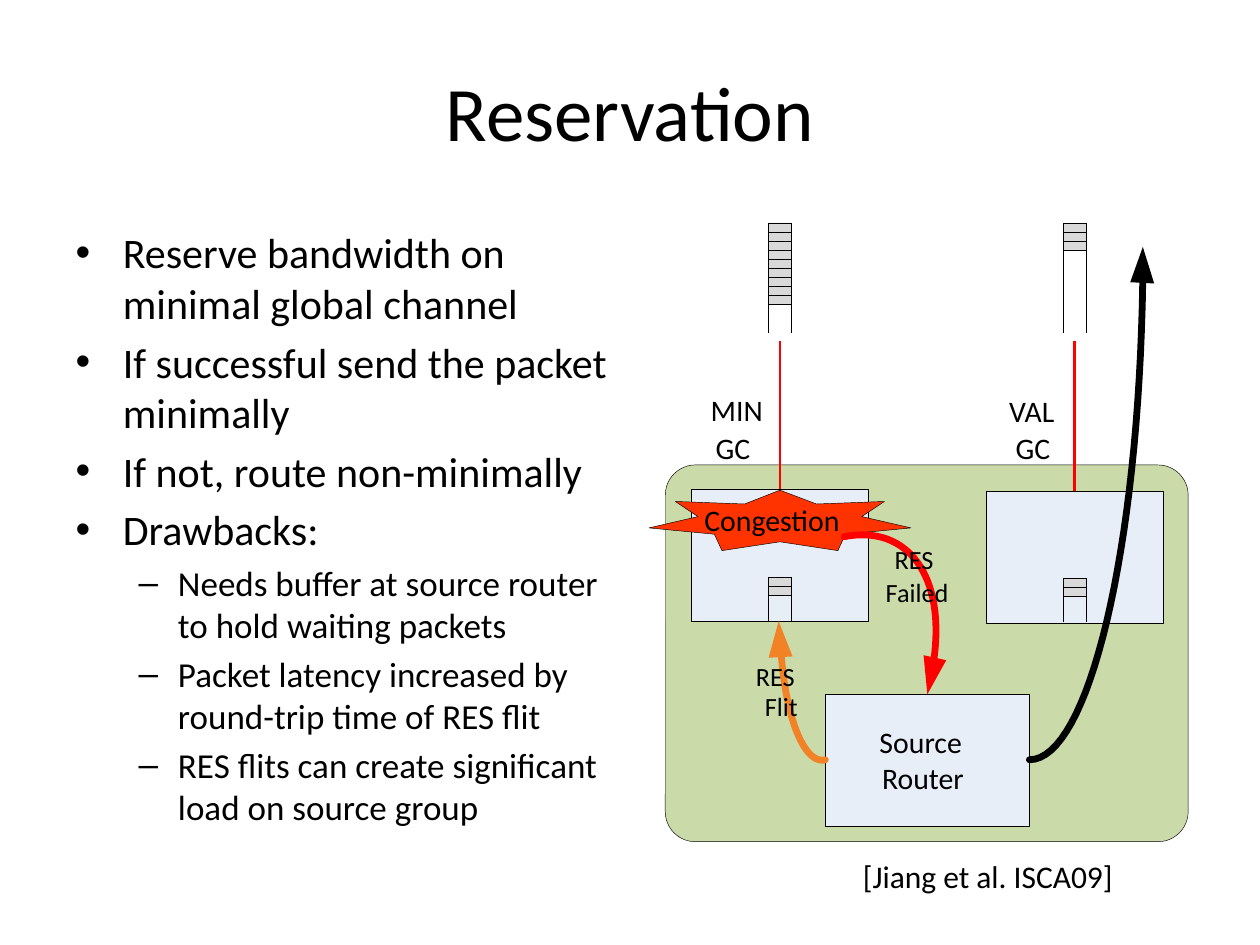
"""Build the Reservation slide on a grid of 100 columns by 75 rows."""
import dataclasses
import typing

import lxml.etree
import pptx
import pptx.dml.color
import pptx.enum.shapes
import pptx.enum.text
import pptx.oxml.ns
import pptx.util

KIND = pptx.enum.shapes.MSO_SHAPE
CELL = pptx.util.Inches(0.1)


def hue(code):
    return pptx.dml.color.RGBColor.from_string(code)


def grid(*marks):
    return [round(mark * CELL) for mark in marks]


def curve(a, b, c, d, steps=32):
    spots = []
    for step in range(steps + 1):
        t = step / steps
        s = 1 - t
        spots.append(tuple(s**3 * p + 3 * s * s * t * q + 3 * s * t * t * r + t**3 * u
                           for p, q, r, u in zip(a, b, c, d)))
    return spots


@dataclasses.dataclass
class Draw:
    slide: typing.Any
    font: str = "Calibri"
    ink: str = "000000"
    pale: str = "E8EEF7"
    gray: str = "D9D9D9"
    thin: float = 0.25

    def say(self, para, text, size):
        run = para.add_run()
        run.text = text
        run.font.name = self.font
        run.font.size = pptx.util.Pt(size)
        run.font.color.rgb = hue(self.ink)

    def paint(self, shape, fill=None, line=None, width=None):
        shape.shadow.inherit = False
        if fill:
            shape.fill.solid()
            shape.fill.fore_color.rgb = hue(fill)
        else:
            shape.fill.background()
        if line:
            shape.line.color.rgb = hue(line)
            shape.line.width = pptx.util.Pt(width or self.thin)
        else:
            shape.line.fill.background()
        return shape

    def place(self, index, box, items):
        holder = self.slide.placeholders[index]
        holder.left, holder.top, holder.width, holder.height = grid(*box)
        frame = holder.text_frame
        for count, (level, size, text) in enumerate(items):
            para = frame.add_paragraph() if count else frame.paragraphs[0]
            para.level = level
            self.say(para, text, size)

    def box(self, x, y, w, h, fill, kind=KIND.RECTANGLE):
        shape = self.slide.shapes.add_shape(kind, *grid(x, y, w, h))
        return self.paint(shape, fill, self.ink)

    def label(self, x, y, w, h, text, size=17, pad=0, level=0):
        box = self.slide.shapes.add_textbox(*grid(x, y, w, h))
        frame = box.text_frame
        frame.word_wrap = False
        frame.auto_size = pptx.enum.text.MSO_AUTO_SIZE.SHAPE_TO_FIT_TEXT
        frame.margin_left = frame.margin_right = round(pad * CELL)
        frame.margin_top = frame.margin_bottom = round(pad * CELL / 2)
        frame.paragraphs[0].level = level
        self.say(frame.paragraphs[0], text, size)
        return box

    def line(self, start, end, color=None, width=None, join=None):
        link = self.slide.shapes.add_connector(
            pptx.enum.shapes.MSO_CONNECTOR.STRAIGHT, *grid(*start, *end))
        link.line.color.rgb = hue(color or self.ink)
        link.line.width = pptx.util.Pt(width or self.thin)
        if join:
            link.end_connect(join, 0)
        lxml.etree.SubElement(link._element.spPr, pptx.oxml.ns.qn("a:effectLst"))

    def form(self, spots, close=True):
        spots = [grid(*spot) for spot in spots]
        build = self.slide.shapes.build_freeform(*spots[0])
        build.add_line_segments(spots[1:], close=close)
        return build.convert_to_shape()

    def arrow(self, bend, head, color, words=()):
        arc = self.paint(self.form(curve(*bend), False), None, color, 3.88)
        arc._element.spPr.find(pptx.oxml.ns.qn("a:ln")).set("cap", "rnd")
        tip = self.paint(self.form(head), color)
        names = [self.label(*word, size=15) for word in words]
        self.slide.shapes.add_group_shape([arc, tip, *names])

    def queue(self, x, y, slots, depth, w=1.8, step=0.72):
        self.box(x, y, w, slots * step, self.gray)
        for side in (x, x + w):
            self.line((side, y), (side, y + depth))
        for slot in range(1, slots):
            row = y + slot * step
            self.line((x, row), (x + w, row))


def main():
    deck = pptx.Presentation()
    deck.slide_width, deck.slide_height = grid(100, 75)
    draw = Draw(deck.slides.add_slide(deck.slide_layouts[1]))
    red = "FF0000"

    draw.place(0, (5, 2.5, 90, 12.5), [(0, 44, "Reservation")])
    draw.place(1, (5, 17.5, 44.2, 49.5), [
        (0, 24, "Reserve bandwidth on minimal global channel"),
        (0, 24, "If successful send the packet minimally"),
        (0, 24, "If not, route non-minimally"),
        (0, 24, "Drawbacks:"),
        (1, 20, "Needs buffer at source router to hold waiting packets"),
        (1, 20, "Packet latency increased by round-trip time of RES flit"),
        (1, 20, "RES flits can create significant load on source group"),
    ])

    group = draw.box(52.8, 36.9, 41.5, 29.9, "CADAA9", KIND.ROUNDED_RECTANGLE)
    group.adjustments[0] = 0.08
    draw.box(65.5, 55.1, 16.2, 10.5, draw.pale)
    draw.label(69.8, 57.4, 7.5, 2.8, "Source")
    draw.label(70, 60.3, 7.1, 2.8, "Router")
    for x, y, slots in ((54.9, 38.8, 9), (78.3, 39, 3)):
        router = draw.box(x, y, 14, 10.5, draw.pale)
        mid = x + 7
        draw.line((mid, 27.1), (mid, y), red, 1.5, router)
        draw.queue(mid - 0.9, 17.7, slots, 8.7)

    draw.arrow([(81.7, 60.3), (86.4, 60.3), (90.4, 43.6), (90.7, 22.2)],
               [(89.7, 22.4), (90.7, 19.6), (91.6, 22.5)], draw.ink)

    burst = draw.form([
        (59.1, 40), (53.6, 39.8), (55.4, 41), (51.5, 41.9), (56.7, 42.4),
        (57.3, 43.7), (61.9, 43), (66.5, 43.7), (67.1, 42.4), (72.3, 41.9),
        (68.4, 41), (70.2, 39.8), (64.8, 40), (61.9, 38.9)])
    draw.paint(burst, "FF3300", draw.ink)
    draw.label(55.9, 39.8, 12, 2.8, "Congestion")
    draw.queue(61, 45.8, 2, 3.5)
    draw.queue(84.4, 45.9, 2, 3.5)

    draw.arrow([(65.5, 60.3), (63.9, 60.7), (62.4, 57.2), (62, 51.9)],
               [(61, 52.2), (61.8, 49.3), (62.9, 52.1)], "F28226",
               [(60, 52.4, 4.3, 2.5, "RES"), (60.7, 54.8, 2.8, 2.5, "Flit")])
    draw.arrow([(67, 42.6), (72.1, 41.6), (75.1, 45.8), (74.1, 52.5)],
               [(75.1, 52.4), (73.6, 55.1), (73.3, 52)], red,
               [(71, 43.1, 4.3, 2.5, "RES"), (70.3, 45.7, 5.7, 2.5, "Failed")])

    draw.label(56.4, 31.1, 5, 2.8, "MIN")
    draw.label(56.8, 34.1, 3.5, 2.8, "GC")
    draw.label(80.1, 31.2, 4.5, 2.8, "VAL")
    draw.label(80.6, 34.1, 3.5, 2.8, "GC")
    draw.label(62.5, 67.5, 27.1, 4, "[Jiang et al. ISCA09]", 18, 1, 1)
    deck.save("out.pptx")


if __name__ == "__main__":
    main()
